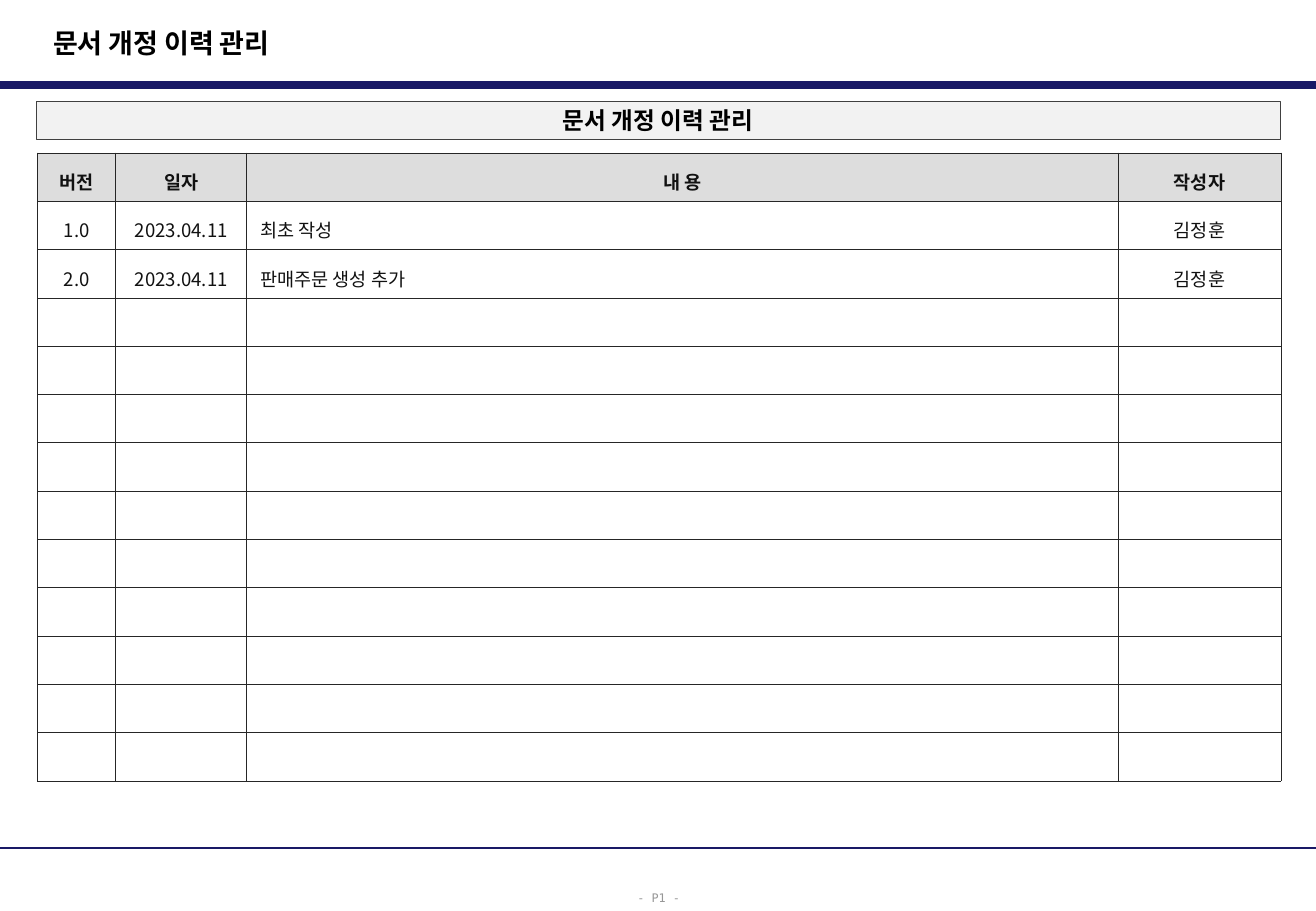
"""Build the document revision history slide."""
from dataclasses import dataclass

from lxml import etree
from pptx import Presentation
from pptx.dml.color import RGBColor
from pptx.enum.shapes import MSO_CONNECTOR, MSO_SHAPE
from pptx.enum.text import MSO_ANCHOR, PP_ALIGN
from pptx.oxml.ns import qn
from pptx.slide import Slide
from pptx.table import _Cell
from pptx.text.text import TextFrame
from pptx.util import Cm, Pt

LEFT, CENTER = PP_ALIGN.LEFT, PP_ALIGN.CENTER
MIDDLE, TOP = MSO_ANCHOR.MIDDLE, MSO_ANCHOR.TOP
STRAIGHT, RECTANGLE = MSO_CONNECTOR.STRAIGHT, MSO_SHAPE.RECTANGLE


@dataclass(frozen=True)
class TextStyle:
    size: float
    color: str
    bold: bool = False
    font: str = "Noto Sans CJK KR"
    line_spacing: float = 1.0


@dataclass(frozen=True)
class Theme:
    rule: str = "191966"
    banner_fill: str = "F2F2F2"
    banner_line: str = "404040"
    header_fill: str = "DDDDDD"
    grid: str = "262626"
    grid_width: float = 0.5
    title: TextStyle = TextStyle(16, "000000", True)
    banner: TextStyle = TextStyle(14, "000000", True)
    header: TextStyle = TextStyle(11, "111111", True, line_spacing=1.3)
    body: TextStyle = TextStyle(11, "111111", line_spacing=1.3)
    page: TextStyle = TextStyle(7, "969696", font="DejaVu Sans Mono", line_spacing=1.3)


@dataclass(frozen=True)
class Box:
    left: float
    top: float
    width: float
    height: float

    def emu(self) -> tuple[Cm, Cm, Cm, Cm]:
        return Cm(self.left), Cm(self.top), Cm(self.width), Cm(self.height)


@dataclass(frozen=True)
class Rule:
    top: float
    weight: float


@dataclass(frozen=True)
class Column:
    heading: str
    width: float
    align: PP_ALIGN = CENTER


@dataclass(frozen=True)
class Revision:
    version: str = ""
    date: str = ""
    content: str = ""
    author: str = ""

    def values(self) -> tuple[str, ...]:
        return self.version, self.date, self.content, self.author


THEME = Theme()
SLIDE_WIDTH, SLIDE_HEIGHT = 27.51, 19.05
HEADING = "문서 개정 이력 관리"
RULES = (Rule(1.78, 4.5), Rule(17.73, 1.5))
COLUMNS = (
    Column("버전", 1.63),
    Column("일자", 2.74),
    Column("내 용", 18.21, LEFT),
    Column("작성자", 3.41),
)
REVISIONS = (
    Revision("1.0", "2023.04.11", "최초 작성", "김정훈"),
    Revision("2.0", "2023.04.11", "판매주문 생성 추가", "김정훈"),
)
REVISION_ROWS = 12
ROW_HEIGHT = 1.01
TABLE_LEFT, TABLE_TOP = 0.79, 3.2


def write(frame: TextFrame, text: str, style: TextStyle, align: PP_ALIGN) -> None:
    """Put one styled paragraph into a text frame."""
    paragraph = frame.paragraphs[0]
    paragraph.text = text
    paragraph.alignment = align
    paragraph.line_spacing = style.line_spacing
    font = paragraph.font
    font.size, font.bold, font.name = Pt(style.size), style.bold, style.font
    font.color.rgb = RGBColor.from_string(style.color)
    defaults = paragraph._p.pPr.find(qn("a:defRPr"))
    etree.SubElement(defaults, qn("a:ea"), typeface=style.font)


def add_rule(slide: Slide, rule: Rule) -> None:
    """Draw a horizontal rule across the slide."""
    line = slide.shapes.add_connector(
        STRAIGHT, Cm(0), Cm(rule.top), Cm(SLIDE_WIDTH), Cm(rule.top))
    line.line.color.rgb = RGBColor.from_string(THEME.rule)
    line.line.width = Pt(rule.weight)
    etree.SubElement(line._element.spPr, qn("a:effectLst"))


def add_label(slide: Slide, box: Box, text: str, style: TextStyle,
              align: PP_ALIGN, anchor: MSO_ANCHOR, wrap: bool) -> None:
    """Add a plain text box."""
    frame = slide.shapes.add_textbox(*box.emu()).text_frame
    frame.word_wrap = wrap
    frame.vertical_anchor = anchor
    write(frame, text, style, align)


def add_banner(slide: Slide, box: Box, text: str) -> None:
    """Add the outlined heading bar above the table."""
    banner = slide.shapes.add_shape(RECTANGLE, *box.emu())
    banner.shadow.inherit = False
    banner.fill.solid()
    banner.fill.fore_color.rgb = RGBColor.from_string(THEME.banner_fill)
    banner.line.color.rgb = RGBColor.from_string(THEME.banner_line)
    banner.line.width = Pt(THEME.grid_width)
    banner.text_frame.word_wrap = False
    banner.text_frame.vertical_anchor = MIDDLE
    write(banner.text_frame, text, THEME.banner, CENTER)


def add_borders(cell: _Cell) -> None:
    """Outline all four sides of a cell."""
    properties = cell._tc.get_or_add_tcPr()
    for side in ("lnL", "lnR", "lnT", "lnB"):
        border = etree.SubElement(
            properties, qn(f"a:{side}"), w=str(Pt(THEME.grid_width)))
        fill = etree.SubElement(border, qn("a:solidFill"))
        etree.SubElement(fill, qn("a:srgbClr"), val=THEME.grid)


def fill_cell(cell: _Cell, text: str, align: PP_ALIGN, is_header: bool) -> None:
    """Style one table cell and write its text."""
    cell.vertical_anchor = MIDDLE
    cell.margin_left = cell.margin_right = Cm(0.28)
    cell.margin_top = cell.margin_bottom = Cm(0.13)
    add_borders(cell)
    if is_header:
        cell.fill.solid()
        cell.fill.fore_color.rgb = RGBColor.from_string(THEME.header_fill)
    else:
        cell.fill.background()
    write(cell.text_frame, text, THEME.header if is_header else THEME.body, align)


def add_history(slide: Slide) -> None:
    """Add the revision table with its spare rows."""
    spare = (Revision(),) * (REVISION_ROWS - len(REVISIONS))
    rows = [tuple(column.heading for column in COLUMNS)]
    rows += [revision.values() for revision in REVISIONS + spare]
    box = Box(TABLE_LEFT, TABLE_TOP, sum(column.width for column in COLUMNS),
              ROW_HEIGHT * len(rows))
    table = slide.shapes.add_table(len(rows), len(COLUMNS), *box.emu()).table
    table.first_row = table.horz_banding = False
    for index, column in enumerate(COLUMNS):
        table.columns[index].width = Cm(column.width)
    for row, values in enumerate(rows):
        table.rows[row].height = Cm(ROW_HEIGHT)
        for index, (column, text) in enumerate(zip(COLUMNS, values)):
            is_header = row == 0
            align = CENTER if is_header else column.align
            fill_cell(table.cell(row, index), text, align, is_header)


def main() -> None:
    """Compose the slide and save it."""
    deck = Presentation()
    deck.slide_width, deck.slide_height = Cm(SLIDE_WIDTH), Cm(SLIDE_HEIGHT)
    slide = deck.slides.add_slide(deck.slide_layouts[6])
    for rule in RULES:
        add_rule(slide, rule)
    add_label(slide, Box(13.06, 18.42, 1.42, 0.64), "- P1 -", THEME.page, CENTER, TOP, False)
    add_history(slide)
    add_label(slide, Box(0.86, 0.41, 18.06, 0.97), HEADING, THEME.title, LEFT, MIDDLE, True)
    add_banner(slide, Box(0.76, 2.12, 26, 0.8), HEADING)
    deck.save("out.pptx")


if __name__ == "__main__":
    main()
